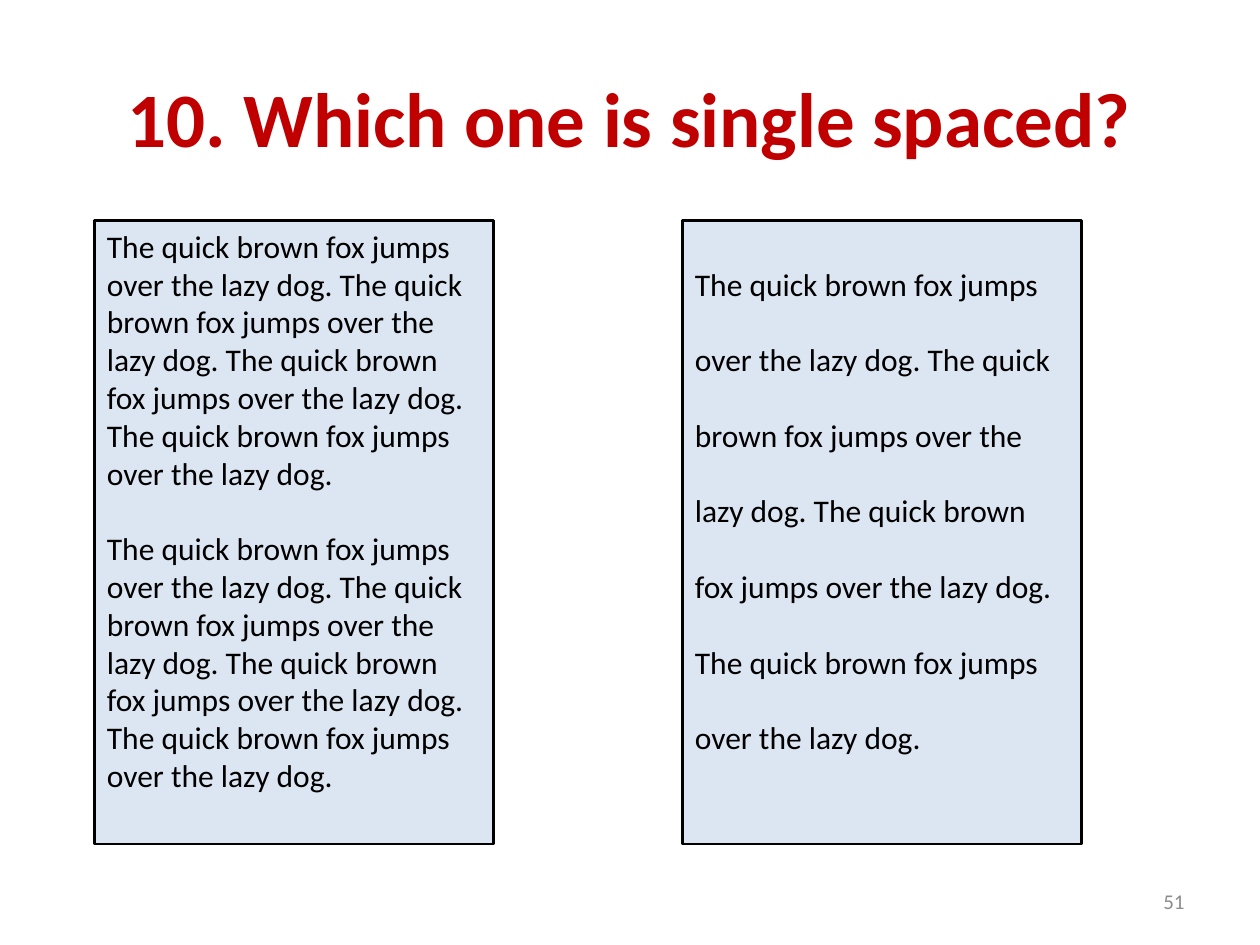
import pptx
import pptx.util
import pptx.dml.color
import pptx.enum.shapes
import pptx.enum.text
from dataclasses import dataclass

Pt = pptx.util.Pt
Align = pptx.enum.text.PP_ALIGN
Anchor = pptx.enum.text.MSO_ANCHOR


@dataclass(frozen=True)
class Theme:
    face: str = "Calibri"
    red: str = "C00000"
    ink: str = "000000"
    grey: str = "8C8C8C"
    pale: str = "DCE6F2"
    head: float = 44
    body: float = 18
    small: float = 12
    edge: float = 1.5
    gap: float = 21.6


def color(code):
    return pptx.dml.color.RGBColor.from_string(code)


class Page:
    def __init__(self, deck, theme):
        self.theme = theme
        self.slide = deck.slides.add_slide(deck.slide_layouts[5])

    def label(self, shape, texts, size, ink, align, anchor, bold=False):
        frame = shape.text_frame
        frame.word_wrap = True
        frame.auto_size = pptx.enum.text.MSO_AUTO_SIZE.NONE
        frame.vertical_anchor = anchor
        frame.text = "\n".join(texts)
        for par in frame.paragraphs:
            par.alignment = align
            font = par.font
            font.name = self.theme.face
            font.size = Pt(size)
            font.bold = bold
            font.color.rgb = color(ink)
        return frame.paragraphs

    def title(self, text, left, top, width, height):
        shape = self.slide.shapes.title
        shape.left, shape.top = Pt(left), Pt(top)
        shape.width, shape.height = Pt(width), Pt(height)
        self.label(shape, [text], self.theme.head, self.theme.red,
                   Align.CENTER, Anchor.MIDDLE, True)

    def number(self, text, left, top, width, height):
        shape = self.slide.shapes.add_textbox(
            Pt(left), Pt(top), Pt(width), Pt(height))
        self.label(shape, [text], self.theme.small, self.theme.grey,
                   Align.RIGHT, Anchor.MIDDLE)

    def panel(self, texts, spacing, left, top, width, height):
        shape = self.slide.shapes.add_shape(
            pptx.enum.shapes.MSO_SHAPE.RECTANGLE,
            Pt(left), Pt(top), Pt(width), Pt(height))
        shape.shadow.inherit = False
        shape.fill.solid()
        shape.fill.fore_color.rgb = color(self.theme.pale)
        shape.line.color.rgb = color(self.theme.ink)
        shape.line.width = Pt(self.theme.edge)
        pars = self.label(shape, texts, self.theme.body, self.theme.ink,
                          Align.LEFT, Anchor.TOP)
        for par in pars:
            par.line_spacing = spacing
        for par in pars[1:]:
            par.space_before = Pt(self.theme.gap)


def main():
    deck = pptx.Presentation()
    deck.slide_width, deck.slide_height = Pt(720), Pt(540)
    page = Page(deck, Theme())
    page.title("10. Which one is single spaced?", 36, 21.6, 648, 90)
    page.number("51", 516, 500.5, 168, 28.75)
    sample = " ".join(["The quick brown fox jumps over the lazy dog."] * 4)
    for left, count, spacing in ((54, 2, 1.0), (390, 1, 2.0)):
        page.panel([sample] * count, spacing, left, 126, 228, 356.4)
    deck.save("out.pptx")


if __name__ == "__main__":
    main()
